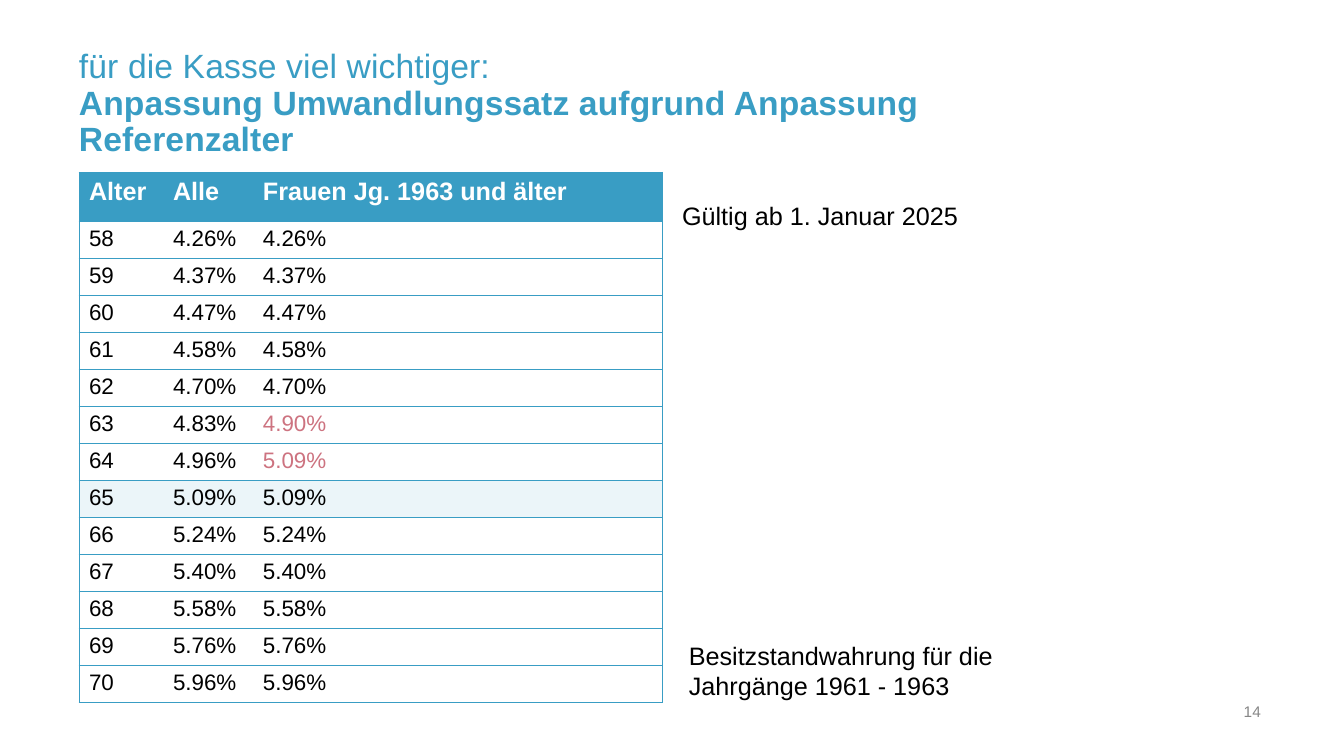
from pptx import Presentation
from pptx.dml.color import RGBColor as RGB
from pptx.enum.text import MSO_ANCHOR as ANC, PP_ALIGN as AL
from pptx.oxml import parse_xml
from pptx.oxml.ns import nsdecls
from pptx.util import Inches, Pt

THEME = {
    "font": "Arial", "blue": "399DC4", "pale": "EBF5F9", "rose": "CD7380",
    "black": "000000", "white": "FFFFFF", "grey": "878787",
    "title": 24, "body": 18, "cell": 16, "small": 11, "line": 0.5,
}

prs = Presentation()
prs.slide_width, prs.slide_height = Inches(13.33), Inches(7.5)
s = prs.slides.add_slide(prs.slide_layouts[6])
COL, ROW = prs.slide_width / 16, prs.slide_height / 9


def add_run(p, text, size, color, bold=False):
    r = p.add_run()
    r.text = text
    fmt = {"name": THEME["font"], "size": Pt(THEME[size]), "bold": bold}
    for key, value in fmt.items():
        setattr(r.font, key, value)
    r.font.color.rgb = RGB.from_string(THEME[color])
    return r


def add_box(col, row, cols, rows, anchor=ANC.TOP):
    sp = s.shapes.add_textbox(int(col * COL), int(row * ROW), int(cols * COL), int(rows * ROW))
    tf = sp.text_frame
    fmt = {"word_wrap": True, "vertical_anchor": anchor, "margin_left": 0,
           "margin_top": 0, "margin_right": 0, "margin_bottom": 0}
    for key, value in fmt.items():
        setattr(tf, key, value)
    return tf.paragraphs[0]


p = add_box(0.94, 0.83, 12.67, 1.06, ANC.BOTTOM)
p.line_spacing = 0.9
title = [("für die Kasse viel wichtiger:", False),
         ("Anpassung Umwandlungssatz aufgrund Anpassung Referenzalter", True)]
for i, (text, bold) in enumerate(title):
    if i:
        p.add_line_break()
    r = add_run(p, text, "title", "blue", bold)
    r.font._element.set("spc", "10")

p = add_box(13.38, 8.35, 1.63, 0.23, ANC.BOTTOM)
p.alignment = AL.RIGHT
add_run(p, "14", "small", "grey")

rates = ["4.26%", "4.37%", "4.47%", "4.58%", "4.70%", "4.83%", "4.96%",
         "5.09%", "5.24%", "5.40%", "5.58%", "5.76%", "5.96%"]
women = {63: "4.90%", 64: "5.09%"}
data = [("Alter", "Alle", "Frauen Jg. 1963 und älter")]
data += [(str(age), rate, women.get(age, rate)) for age, rate in enumerate(rates, 58)]

widths, head, body = [1, 1.07, 4.87], 0.59, 0.41
height = head + body * len(rates)
tbl = s.shapes.add_table(len(data), len(widths), int(0.94 * COL), int(2.05 * ROW),
                         int(sum(widths) * COL), int(height * ROW)).table
tbl.first_row = tbl.horz_banding = False
for j, width in enumerate(widths):
    tbl.columns[j].width = int(width * COL)

for i, values in enumerate(data):
    tbl.rows[i].height = int((body if i else head) * ROW)
    for j, text in enumerate(values):
        cell = tbl.cell(i, j)
        edges = {"L": j == 0, "R": j == len(widths) - 1, "T": True, "B": True}
        for side, drawn in edges.items():
            paint = (f'<a:solidFill><a:srgbClr val="{THEME["blue"]}"/></a:solidFill>'
                     if drawn else "<a:noFill/>")
            cell._tc.get_or_add_tcPr().append(parse_xml(
                f'<a:ln{side} {nsdecls("a")} w="{Pt(THEME["line"])}">{paint}</a:ln{side}>'))
        fill = "blue" if i == 0 else "pale" if values[0] == "65" else "white"
        cell.fill.solid()
        cell.fill.fore_color.rgb = RGB.from_string(THEME[fill])
        p = cell.text_frame.paragraphs[0]
        if i == 0:
            add_run(p, text, "body", "white", True)
        else:
            add_run(p, text, "cell", "rose" if j == 2 and text != values[1] else "black")

notes = [("Besitzstandwahrung für die Jahrgänge 1961 - 1963", 8.2, 7.62, 0.73),
         ("Gültig ab 1. Januar 2025", 8.12, 2.39, 0.36)]
for text, col, row, rows in notes:
    add_run(add_box(col, row, 5.08, rows), text, "body", "black")

prs.save("out.pptx")
